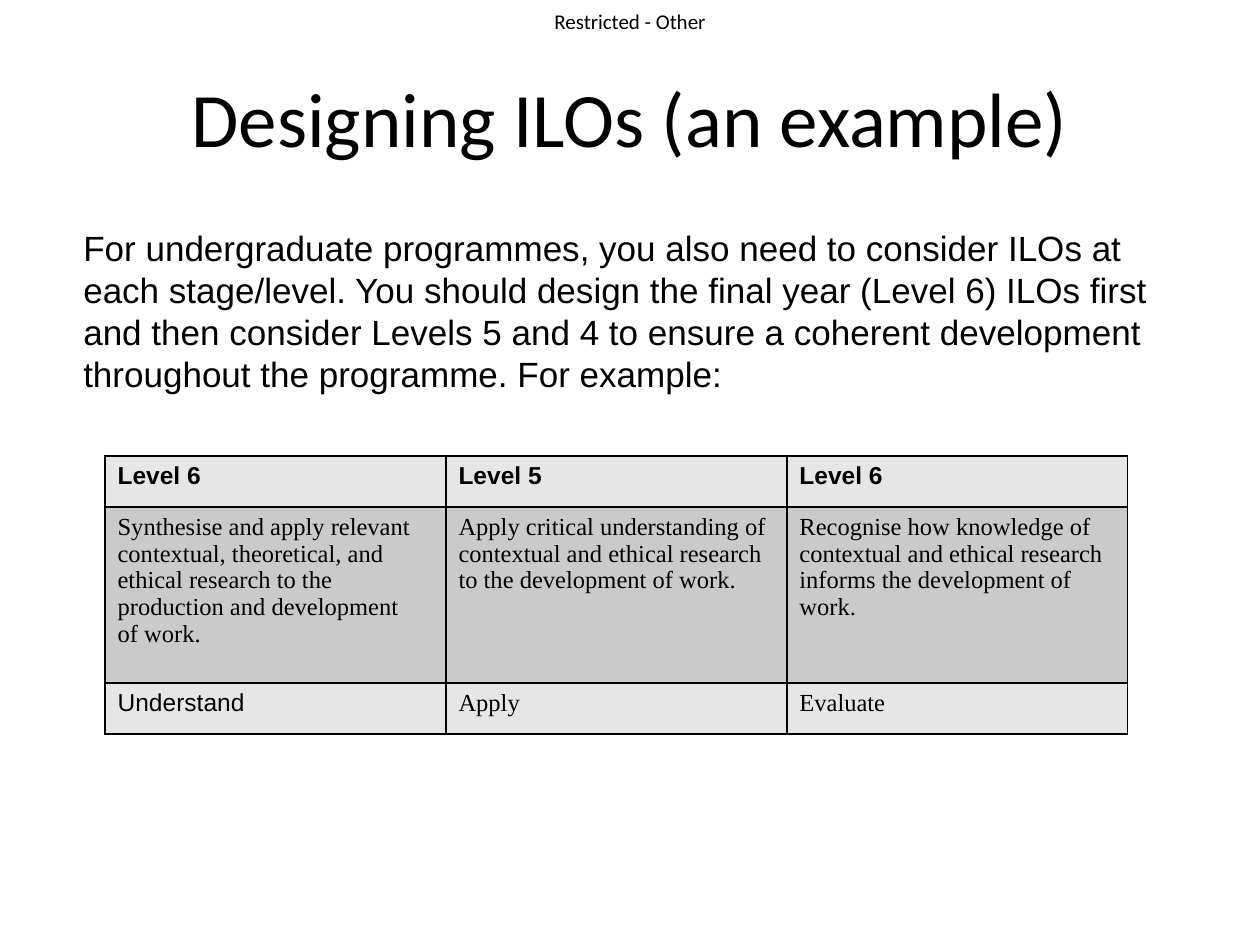
from dataclasses import dataclass

from lxml.etree import SubElement as Sub
from pptx import Presentation
from pptx.dml.color import RGBColor as Rgb
from pptx.enum.text import MSO_ANCHOR as Anchor, PP_ALIGN as Align
from pptx.oxml.ns import qn
from pptx.util import Pt


@dataclass(frozen=True)
class Theme:
    ink: str = "000000"
    light: str = "E6E6E6"
    dark: str = "CACACA"
    head: str = "Calibri"
    sans: str = "Arial"
    serif: str = "Times New Roman"
    mark: int = 12
    title: int = 44
    body: int = 20
    cell: int = 14


LOOK = Theme()

# Each row: height, fill, bold, then (font, paragraphs) per cell
ROWS = [
    (29.2, LOOK.light, True, [
        (LOOK.sans, ["Level 6"]),
        (LOOK.sans, ["Level 5"]),
        (LOOK.sans, ["Level 6"]),
    ]),
    (100.6, LOOK.dark, False, [
        (LOOK.serif, ["Synthesise and apply relevant",
                      "contextual, theoretical, and",
                      "ethical research to the",
                      "production and development",
                      "of work."]),
        (LOOK.serif, ["Apply critical understanding of contextual and "
                      "ethical research to the development of work."]),
        (LOOK.serif, ["Recognise how knowledge of contextual and ethical "
                      "research informs the development of work."]),
    ]),
    (29.2, LOOK.light, False, [
        (LOOK.sans, ["Understand"]),
        (LOOK.serif, ["Apply"]),
        (LOOK.serif, ["Evaluate"]),
    ]),
]


def add_run(para, text, font, size, bold=False):
    run = para.add_run()
    run.text = text
    run.font.name = font
    run.font.size = Pt(size)
    run.font.bold = bold
    run.font.color.rgb = Rgb.from_string(LOOK.ink)


def add_box(slide, left, top, width, height, wrap=True):
    box = slide.shapes.add_textbox(Pt(left), Pt(top), Pt(width), Pt(height))
    box.text_frame.word_wrap = wrap
    return box.text_frame


def add_mark(slide):
    frame = add_box(slide, 316.8, 5, 90, 14.4, wrap=False)
    frame.margin_left = frame.margin_right = 0
    frame.margin_top = frame.margin_bottom = 0
    add_run(frame.paragraphs[0], "Restricted - Other", LOOK.head, LOOK.mark)


def set_title(slide, text):
    title = slide.shapes.title
    title.left, title.top = Pt(36), Pt(21.6)
    title.width, title.height = Pt(648), Pt(90)
    frame = title.text_frame
    frame.vertical_anchor = Anchor.MIDDLE
    para = frame.paragraphs[0]
    para.alignment = Align.CENTER
    add_run(para, text, LOOK.head, LOOK.title)


def add_body(slide, text):
    para = add_box(slide, 36, 126, 647.3, 356.4).paragraphs[0]
    para.space_before = Pt(5.6)
    para.line_spacing = Pt(24)
    props = para._p.get_or_add_pPr()
    props.set("marL", str(Pt(4.5)))
    props.set("indent", "0")
    add_run(para, text, LOOK.sans, LOOK.body)


def add_edges(cell):
    props = cell._tc.get_or_add_tcPr()
    for spot, side in enumerate(("lnL", "lnR", "lnT", "lnB")):
        line = Sub(props, qn(f"a:{side}"), w=str(Pt(1)))
        fill = Sub(line, qn("a:solidFill"))
        Sub(fill, qn("a:srgbClr"), val=LOOK.ink)
        props.insert(spot, line)  # edges come before the fill


def fill_cell(cell, font, lines, fill, bold):
    cell.fill.solid()
    cell.fill.fore_color.rgb = Rgb.from_string(fill)
    add_edges(cell)
    frame = cell.text_frame
    for spot, text in enumerate(lines):
        para = frame.add_paragraph() if spot else frame.paragraphs[0]
        para.line_spacing = Pt(15.4)
        add_run(para, text, font, LOOK.cell, bold)


def add_grid(slide):
    wide, tall = 194.8, sum(row[0] for row in ROWS)
    grid = slide.shapes.add_table(
        len(ROWS), 3, Pt(60), Pt(260.6), Pt(3 * wide), Pt(tall)).table
    grid.first_row = grid.horz_banding = False
    for col in grid.columns:
        col.width = Pt(wide)
    for y, (high, fill, bold, cells) in enumerate(ROWS):
        grid.rows[y].height = Pt(high)
        for x, (font, lines) in enumerate(cells):
            fill_cell(grid.cell(y, x), font, lines, fill, bold)


def main():
    deck = Presentation()
    deck.slide_width, deck.slide_height = Pt(720), Pt(540)
    slide = deck.slides.add_slide(deck.slide_layouts[5])

    # Marking and heading
    add_mark(slide)
    set_title(slide, "Designing ILOs (an example)")

    # Introduction
    add_body(slide, "For undergraduate programmes, you also need to consider "
                    "ILOs at each stage/level. You should design the final "
                    "year (Level 6) ILOs first and then consider Levels 5 "
                    "and 4 to ensure a coherent development throughout the "
                    "programme. For example:")

    # Outcomes by level
    add_grid(slide)
    deck.save("out.pptx")


if __name__ == "__main__":
    main()
